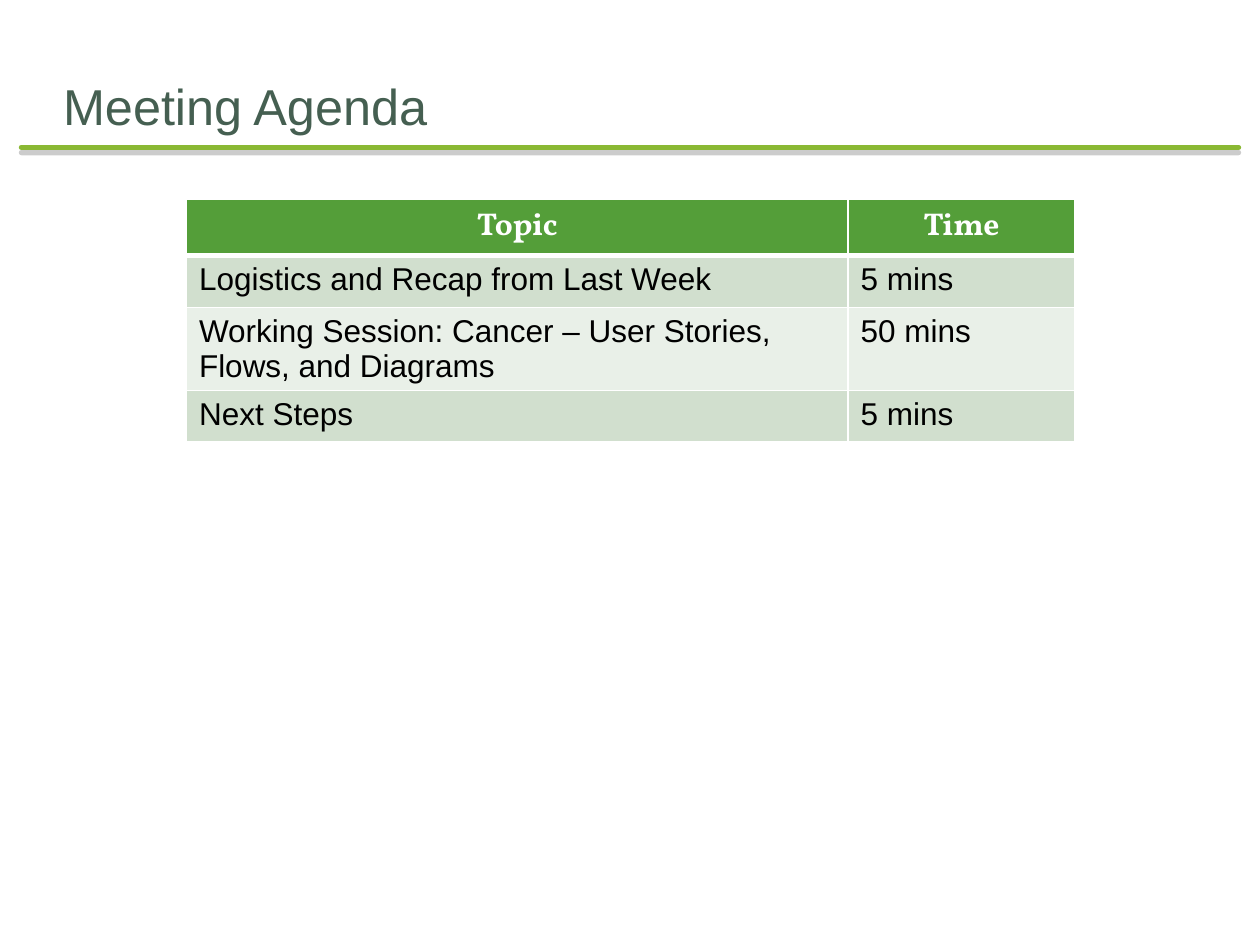
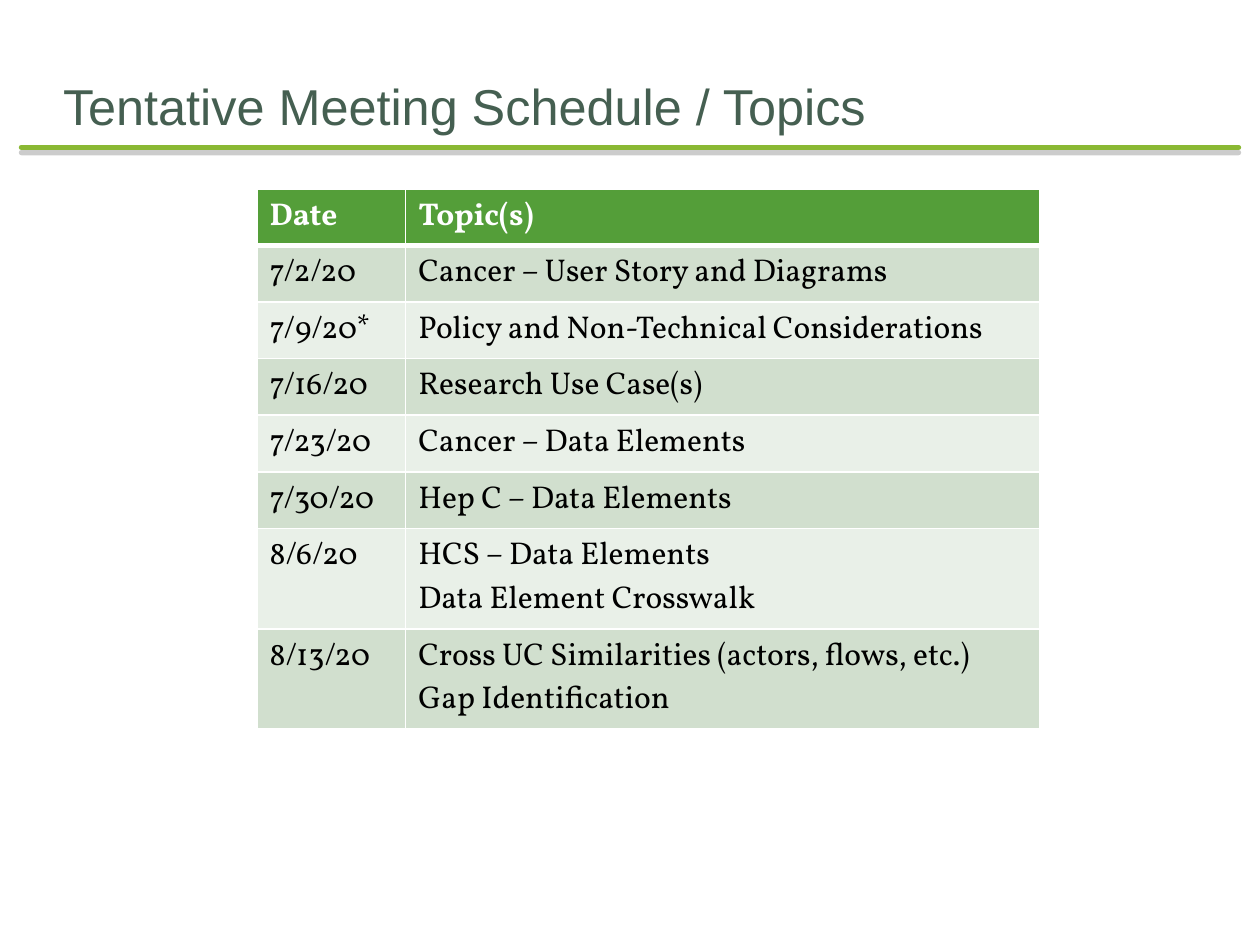
from lxml.etree import SubElement
from pptx import Presentation
from pptx.dml.color import RGBColor
from pptx.enum.shapes import MSO_CONNECTOR
from pptx.enum.text import MSO_ANCHOR, MSO_AUTO_SIZE, PP_ALIGN
from pptx.oxml import parse_xml
from pptx.oxml.ns import nsdecls, qn
from pptx.util import Pt

EMU_PER_PX = 9144
SLIDE_WIDTH, SLIDE_HEIGHT = 1000, 750
ROW_HEIGHT = 41
TITLE_ONLY = 5

WHITE = RGBColor(0xFF, 0xFF, 0xFF)
BLACK = RGBColor(0x00, 0x00, 0x00)
SLATE = RGBColor(0x45, 0x5F, 0x51)
LIME = RGBColor(0x8A, 0xB8, 0x33)
GREEN = RGBColor(0x54, 0x9E, 0x39)
GRAY = RGBColor(0x80, 0x80, 0x80)
BANDS = (RGBColor(0xD1, 0xDF, 0xCE), RGBColor(0xE9, 0xF0, 0xE8))

SANS, SERIF = "Arial", "Vollkorn"

AGENDA = [
    ("Topic", "Time"),
    ("Logistics and Recap from Last Week", "5 mins"),
    ("Working Session: Cancer – User Stories, Flows, and Diagrams", "50 mins"),
    ("Next Steps", "5 mins"),
]
SCHEDULE = [
    ("Date", "Topic(s)"),
    ("7/2/20", "Cancer – User Story and Diagrams"),
    ("7/9/20*", "Policy and Non-Technical Considerations"),
    ("7/16/20", "Research Use Case(s)"),
    ("7/23/20", "Cancer – Data Elements"),
    ("7/30/20", "Hep C – Data Elements"),
    ("8/6/20", "HCS – Data Elements\nData Element Crosswalk"),
    ("8/13/20", "Cross UC Similarities (actors, flows, etc.)\nGap Identification"),
]


def px(*lengths):
    """Turn px lengths into a list of EMU."""
    return [length * EMU_PER_PX for length in lengths]


def style_text(frame, font, size, color, bold=False, align=PP_ALIGN.LEFT):
    """Format every paragraph and run of a text frame."""
    for para in frame.paragraphs:
        para.alignment = align
        for span in para.runs:
            span.font.name = font
            span.font.size = Pt(size)
            span.font.color.rgb = color
            span.font.bold = bold


def add_title_rule(page):
    """Draw the round-ended rule with its shadow under the title."""
    rule = page.shapes.add_connector(MSO_CONNECTOR.STRAIGHT, *px(17, 117, 983, 117))
    rule.line.color.rgb = LIME
    rule.line.width = Pt(3)
    rule.line._get_or_add_ln().set("cap", "rnd")
    rule._element.spPr.append(parse_xml(
        f'<a:effectLst {nsdecls("a")}>'
        f'<a:outerShdw dist="{Pt(3)}" dir="5400000" algn="ctr" rotWithShape="0">'
        f'<a:srgbClr val="{GRAY}"><a:alpha val="40000"/></a:srgbClr>'
        '</a:outerShdw></a:effectLst>'))


def add_page(deck, title):
    """Add a slide with the shared title style and rule."""
    page = deck.slides.add_slide(deck.slide_layouts[TITLE_ONLY])
    add_title_rule(page)
    box = page.shapes.title
    box.left, box.top, box.width, box.height = px(50, 50, 900, 58)
    frame = box.text_frame
    frame.text = title
    frame.word_wrap = True
    frame.auto_size = MSO_AUTO_SIZE.NONE
    frame.vertical_anchor = MSO_ANCHOR.BOTTOM
    frame.margin_left, frame.margin_top, frame.margin_right, frame.margin_bottom = px(0, 5, 0, 0)
    style_text(frame, SANS, 28.8, SLATE)
    return page


def set_borders(cell, top, bottom):
    """Give a cell white borders, with the top and bottom widths in points."""
    properties = cell._tc.get_or_add_tcPr()
    for side, width in (("L", 1), ("R", 1), ("T", top), ("B", bottom)):
        line = SubElement(properties, qn(f"a:ln{side}"), w=str(Pt(width)))
        fill = SubElement(line, qn("a:solidFill"))
        SubElement(fill, qn("a:srgbClr"), val=str(WHITE))


def add_banded_table(page, left, top, widths, rows, body_font, header_align):
    """Add a table with a green header row and alternating body rows."""
    frame = page.shapes.add_table(
        len(rows), len(widths), *px(left, top, sum(widths), ROW_HEIGHT * len(rows)))
    table = frame.table
    for column, width in zip(table.columns, px(*widths)):
        column.width = width
    for index, texts in enumerate(rows):
        header = index == 0
        for cell, text in zip(table.rows[index].cells, texts):
            cell.text = text
            set_borders(cell, top=3 if index == 1 else 1, bottom=3 if header else 1)
            cell.fill.solid()
            cell.fill.fore_color.rgb = GREEN if header else BANDS[(index - 1) % 2]
            if header:
                style_text(cell.text_frame, SERIF, 18, WHITE, True, header_align)
            else:
                style_text(cell.text_frame, body_font, 18, BLACK)


def main():
    """Build the agenda and schedule slides."""
    deck = Presentation()
    deck.slide_width, deck.slide_height = px(SLIDE_WIDTH, SLIDE_HEIGHT)
    agenda = add_page(deck, "Meeting Agenda")
    add_banded_table(agenda, 148, 158, (525, 180), AGENDA, SANS, PP_ALIGN.CENTER)
    schedule = add_page(deck, "Tentative Meeting Schedule / Topics")
    add_banded_table(schedule, 204, 150, (118, 503), SCHEDULE, SERIF, PP_ALIGN.LEFT)
    deck.save("out.pptx")


if __name__ == "__main__":
    main()
